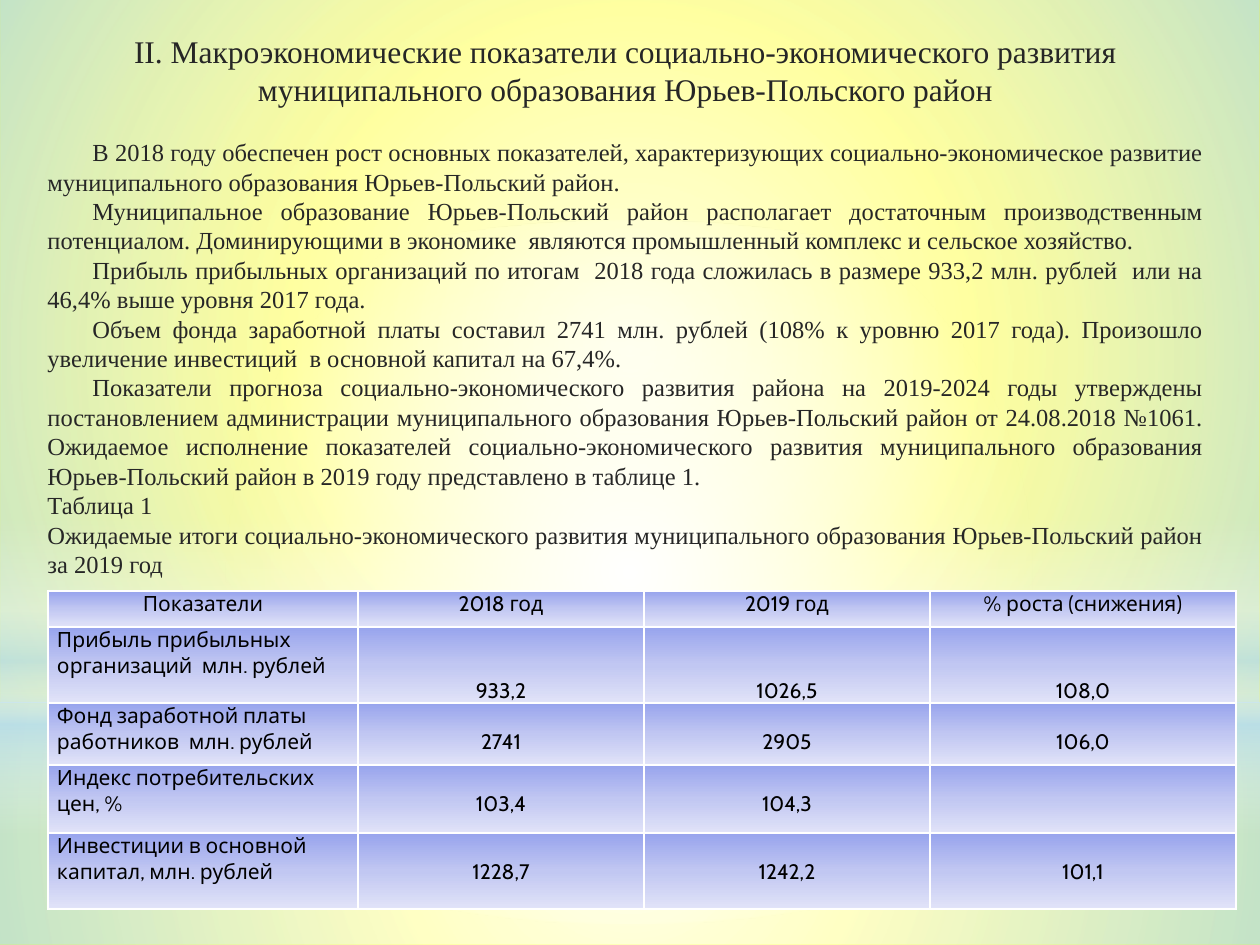
"""Build the slide on macroeconomic indicators of the Yuryev-Polsky district."""
from lxml import etree
from pptx import Presentation
from pptx.dml.color import RGBColor
from pptx.enum.shapes import MSO_SHAPE
from pptx.enum.text import MSO_ANCHOR, MSO_AUTO_SIZE, PP_ALIGN
from pptx.oxml.ns import qn
from pptx.util import Pt

PX = 914400 // 126
RECT, OVAL = MSO_SHAPE.RECTANGLE, MSO_SHAPE.OVAL
LEFT, CENTER, JUSTIFY = PP_ALIGN.LEFT, PP_ALIGN.CENTER, PP_ALIGN.JUSTIFY

THEME = {
    "bg": "FFFF00", "white": "FFFFFF", "sky": "B4DCFA", "ink": "262626", "black": "000000",
    "cell": [(0, "98A4ED", 100), (50, "C1C7F2", 100), (100, "E1E3F8", 100)],
    "serif": "Times New Roman", "sans": "Cabin",
    "title": 18, "body": 14, "table": 12, "leading": 1.2,
}
WHITE, SKY = THEME["white"], THEME["sky"]

BACKDROP = [
    (RECT, (0, 703, 1260, 242), [(0, WHITE, 91), (37, WHITE, 76), (100, SKY, 79)], True),
    (RECT, (0, 0, 1260, 703), [(0, WHITE, 89), (48, WHITE, 62), (100, SKY, 79)], True),
    (RECT, (0, 519, 1260, 315),
     [(0, WHITE, 0), (29, WHITE, 30), (45, SKY, 40), (55, WHITE, 26), (65, SKY, 60), (100, WHITE, 0)], False),
    (OVAL, (0, 221, 1260, 703), [(0, WHITE, 100), (56, WHITE, 0)], True),
]

TITLE = ("II. Макроэкономические показатели социально-экономического развития "
         "муниципального образования Юрьев-Польского район")
INDENTED = [
    "В 2018 году обеспечен рост основных показателей, характеризующих социально-экономическое развитие "
    "муниципального образования Юрьев-Польский район.",
    "Муниципальное образование Юрьев-Польский район располагает достаточным производственным потенциалом. "
    "Доминирующими в экономике  являются промышленный комплекс и сельское хозяйство.",
    "Прибыль прибыльных организаций по итогам  2018 года сложилась в размере 933,2 млн. рублей  "
    "или на 46,4% выше уровня 2017 года.",
    "Объем фонда заработной платы составил 2741 млн. рублей (108% к уровню 2017 года). "
    "Произошло увеличение инвестиций  в основной капитал на 67,4%.",
    "Показатели прогноза социально-экономического развития района на 2019-2024 годы утверждены "
    "постановлением администрации муниципального образования Юрьев-Польский район от 24.08.2018 №1061. "
    "Ожидаемое исполнение показателей социально-экономического развития муниципального образования "
    "Юрьев-Польский район в 2019 году представлено в таблице 1.",
]
CAPTION = [
    "Таблица 1",
    "Ожидаемые итоги социально-экономического развития муниципального образования "
    "Юрьев-Польский район за 2019 год",
]
ROWS = [
    ("Показатели", "2018 год", "2019 год", "% роста (снижения)"),
    ("Прибыль прибыльных организаций  млн. рублей", "933,2", "1026,5", "108,0"),
    ("Фонд заработной платы работников  млн. рублей", "2741", "2905", "106,0"),
    ("Индекс потребительских цен, %", "103,4", "104,3", ""),
    ("Инвестиции в основной капитал, млн. рублей", "1228,7", "1242,2", "101,1"),
]
COL_W = [310, 286, 286, 306]
ROW_H = [36, 75, 62, 68, 76]
VALUE_DROP = [0, 51, 26, 26, 26]

TITLE_BOX = (35, 26, 1181, 88)
BODY_BOX = (35, 131, 1181, 454)
TABLE_AT = (48, 591)
INDENT = 45
CELL_PAD = 9


def emu(box):
    return [v * PX for v in box]


def add_solid(parent, color, alpha=100):
    clr = etree.SubElement(parent, qn("a:srgbClr"), val=color)
    if alpha < 100:
        etree.SubElement(clr, qn("a:alpha"), val=str(alpha * 1000))


def gradient(stops, radial=False):
    grad = etree.Element(qn("a:gradFill"), rotWithShape="1")
    gs_lst = etree.SubElement(grad, qn("a:gsLst"))
    for pos, color, alpha in stops:
        add_solid(etree.SubElement(gs_lst, qn("a:gs"), pos=str(pos * 1000)), color, alpha)
    if radial:
        shade = etree.SubElement(grad, qn("a:path"), path="circle")
        etree.SubElement(shade, qn("a:fillToRect"), l="50000", t="50000", r="50000", b="50000")
    else:
        etree.SubElement(grad, qn("a:lin"), ang="5400000", scaled="0")
    return grad


def style(p, font, size, color, align, leading=None):
    p.alignment = align
    if leading:
        p.line_spacing = Pt(round(size * leading, 1))
    for r in p.runs:
        r.font.name = font
        r.font.size = Pt(size)
        r.font.color.rgb = RGBColor.from_string(color)


def add_backdrop(slide):
    slide.background.fill.solid()
    slide.background.fill.fore_color.rgb = RGBColor.from_string(THEME["bg"])
    for kind, box, stops, radial in BACKDROP:
        s = slide.shapes.add_shape(kind, *emu(box))
        s.shadow.inherit = False
        s.line.fill.background()
        s._element.spPr.find(qn("a:prstGeom")).addnext(gradient(stops, radial))


def add_title(slide):
    s = slide.shapes.title
    s.left, s.top, s.width, s.height = emu(TITLE_BOX)
    slide.shapes._spTree.append(s._element)
    tf = s.text_frame
    tf.text = TITLE
    tf.auto_size = MSO_AUTO_SIZE.NONE
    tf.vertical_anchor = MSO_ANCHOR.TOP
    style(tf.paragraphs[0], THEME["serif"], THEME["title"], THEME["ink"], CENTER, THEME["leading"])


def add_body(slide):
    tf = slide.shapes.add_textbox(*emu(BODY_BOX)).text_frame
    tf.word_wrap = True
    tf.text = "\n".join(INDENTED + CAPTION)
    for i, p in enumerate(tf.paragraphs):
        style(p, THEME["serif"], THEME["body"], THEME["ink"], JUSTIFY, THEME["leading"])
        if i < len(INDENTED):
            p._p.get_or_add_pPr().set("indent", str(INDENT * PX))


def format_cell(cell, text, align, drop):
    cell.text = text
    cell.margin_left = cell.margin_right = CELL_PAD * PX
    cell.margin_top, cell.margin_bottom = drop * PX, 0
    style(cell.text_frame.paragraphs[0], THEME["sans"], THEME["table"], THEME["black"], align)
    tc_pr = cell._tc.get_or_add_tcPr()
    for side in ("a:lnL", "a:lnR", "a:lnT", "a:lnB"):
        ln = etree.SubElement(tc_pr, qn(side), w=str(Pt(1)))
        add_solid(etree.SubElement(ln, qn("a:solidFill")), WHITE)
    tc_pr.append(gradient(THEME["cell"]))


def add_indicators(slide):
    box = emu((*TABLE_AT, sum(COL_W), sum(ROW_H)))
    table = slide.shapes.add_table(len(ROWS), len(COL_W), *box).table
    table.first_row = table.horz_banding = False
    for col, w in zip(table.columns, COL_W):
        col.width = w * PX
    for i, texts in enumerate(ROWS):
        table.rows[i].height = ROW_H[i] * PX
        for j, text in enumerate(texts):
            label = i > 0 and j == 0
            format_cell(table.cell(i, j), text, LEFT if label else CENTER, 0 if label else VALUE_DROP[i])


def main():
    prs = Presentation()
    prs.slide_width, prs.slide_height = emu((1260, 945))
    slide = prs.slides.add_slide(prs.slide_layouts[5])
    add_backdrop(slide)
    add_title(slide)
    add_body(slide)
    add_indicators(slide)
    prs.save("out.pptx")


if __name__ == "__main__":
    main()
